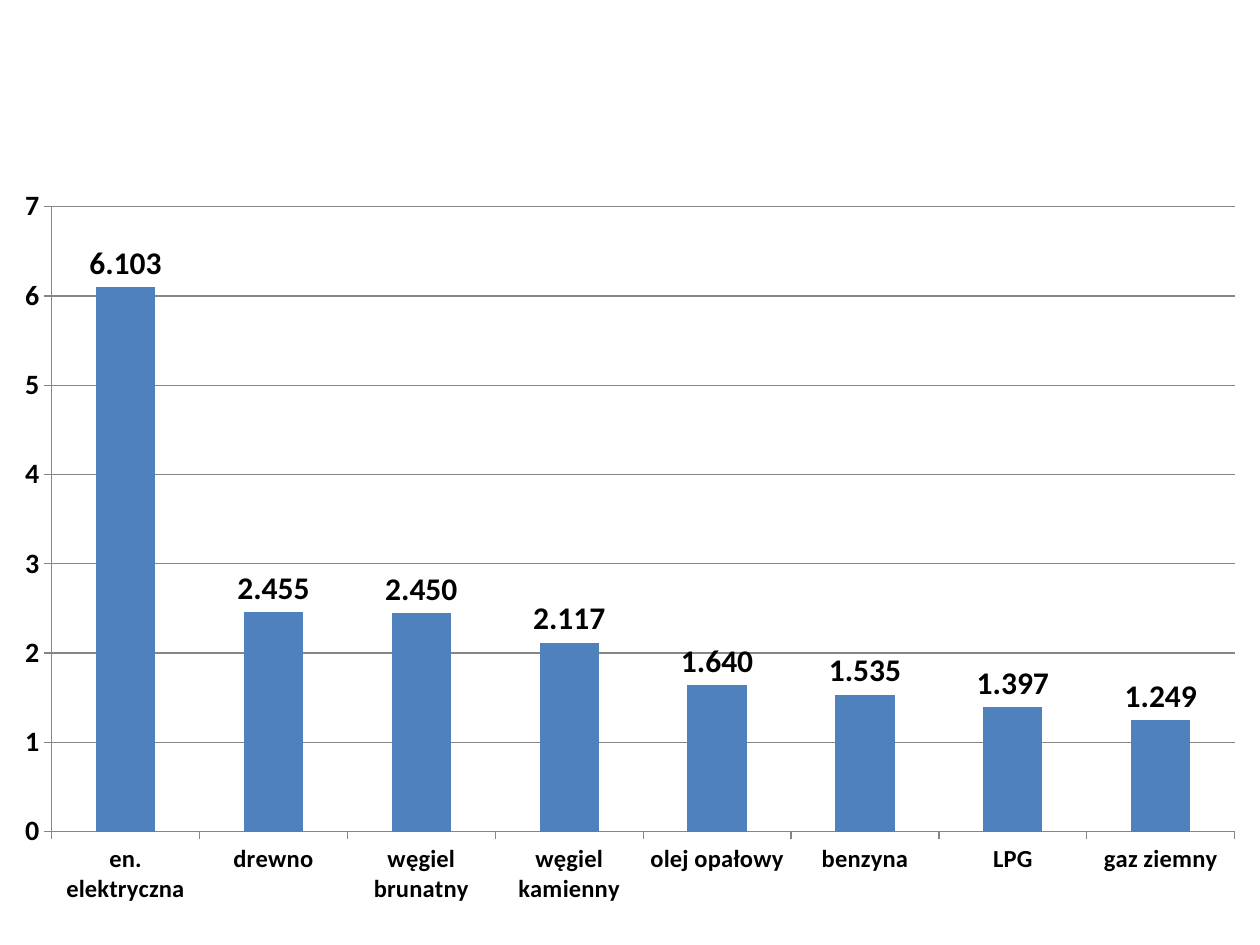
from dataclasses import dataclass

from pptx import Presentation
from pptx.chart.data import CategoryChartData
from pptx.dml.color import RGBColor
from pptx.enum.chart import XL_CHART_TYPE, XL_LABEL_POSITION, XL_TICK_MARK
from pptx.util import Inches, Pt

COLUMNS = XL_CHART_TYPE.COLUMN_CLUSTERED
ABOVE = XL_LABEL_POSITION.OUTSIDE_END
OUTSIDE = XL_TICK_MARK.OUTSIDE
BLANK = 6

COSTS = {
    "en. elektryczna": 6.103,
    "drewno": 2.455,
    "węgiel brunatny": 2.450,
    "węgiel kamienny": 2.117,
    "olej opałowy": 1.640,
    "benzyna": 1.535,
    "LPG": 1.397,
    "gaz ziemny": 1.249,
}


@dataclass(frozen=True)
class Theme:
    face: str = "Calibri"
    ink: RGBColor = RGBColor(0, 0, 0)
    bar: RGBColor = RGBColor(0x4F, 0x81, 0xBD)
    rule: RGBColor = RGBColor(0x86, 0x86, 0x86)
    base: int = 10
    names: int = 14
    scale: int = 16
    values: int = 18


class Deck:
    def __init__(self, theme):
        self.theme = theme
        self.prs = Presentation()
        self.prs.slide_width = Inches(10)
        self.prs.slide_height = Inches(7.5)
        self.slide = self.prs.slides.add_slide(self.prs.slide_layouts[BLANK])

    def font(self, font, size, bold=True):
        font.name = self.theme.face
        font.size = Pt(size)
        font.bold = bold
        font.color.rgb = self.theme.ink

    def line(self, format):
        format.line.color.rgb = self.theme.rule
        format.line.width = Pt(0.75)

    def axis(self, axis, size):
        axis.major_tick_mark = OUTSIDE
        self.font(axis.tick_labels.font, size)
        self.line(axis.format)

    def columns(self, data, left, top, width, height):
        """Add a column chart; the box is given in shares of the slide."""
        wide, high = self.prs.slide_width, self.prs.slide_height
        source = CategoryChartData(number_format="0.000")
        source.categories = list(data)
        source.add_series("Series 1", list(data.values()))
        chart = self.slide.shapes.add_chart(
            COLUMNS, int(left * wide), int(top * high),
            int(width * wide), int(height * high), source).chart
        chart.has_legend = False
        chart.has_title = False
        self.font(chart.font, self.theme.base, bold=False)

        self.axis(chart.category_axis, self.theme.names)
        scale = chart.value_axis
        self.axis(scale, self.theme.scale)
        scale.minimum_scale, scale.maximum_scale = 0, 7
        scale.major_unit = 1
        scale.tick_labels.number_format = "0"
        scale.tick_labels.number_format_is_linked = False
        scale.has_major_gridlines = True
        self.line(scale.major_gridlines.format)

        plot = chart.plots[0]
        plot.gap_width = 150
        plot.vary_by_categories = False
        bars = plot.series[0]
        bars.format.fill.solid()
        bars.format.fill.fore_color.rgb = self.theme.bar
        labels = bars.data_labels
        labels.show_value = True
        labels.position = ABOVE
        labels.number_format = "0.000"
        labels.number_format_is_linked = False
        self.font(labels.font, self.theme.values)


def main():
    deck = Deck(Theme())
    deck.columns(COSTS, left=0, top=0.185, width=1, height=0.788)
    deck.prs.save("out.pptx")


if __name__ == "__main__":
    main()
